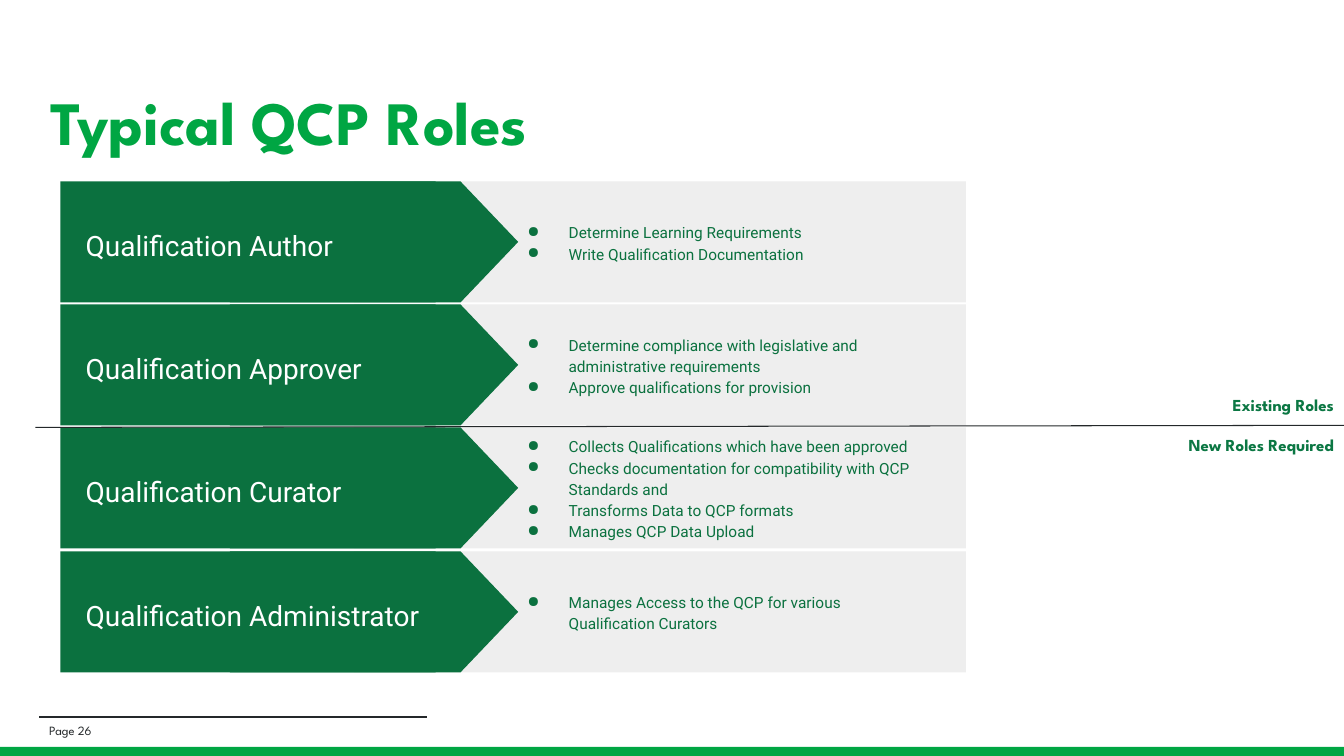
from dataclasses import dataclass

from lxml import etree
from pptx import Presentation
from pptx.dml.color import RGBColor
from pptx.enum.shapes import MSO_CONNECTOR, MSO_SHAPE
from pptx.enum.text import MSO_ANCHOR, PP_ALIGN
from pptx.oxml.ns import qn
from pptx.util import Emu, Pt

RECT = MSO_SHAPE.RECTANGLE
ARROW = MSO_SHAPE.FLOWCHART_OFFPAGE_CONNECTOR
STRAIGHT = MSO_CONNECTOR.STRAIGHT
TOP, MIDDLE = MSO_ANCHOR.TOP, MSO_ANCHOR.MIDDLE
LEFT, RIGHT = PP_ALIGN.LEFT, PP_ALIGN.RIGHT

SCALE = 9144  # EMU in one px, 100 px to the inch
LIME, GREEN, LABEL = "00A643", "0B713F", "0B7743"
GREY, INK, WHITE = "EEEEEE", "24282A", "FFFFFF"
HEAD, BODY = "League Spartan", "Roboto"
FIRST, SPAN, HIGH = 180, 367, 120  # top of first row, three row steps, row height


@dataclass
class Style:
    font: str
    size: int
    color: str
    bold: bool = False
    space: float = 1.0
    align: PP_ALIGN = LEFT
    gap: int = 0
    bullet: bool = False


@dataclass
class Role:
    name: str
    tasks: list[str]
    width: int = 599


TITLE = Style(HEAD, 44, LIME, bold=True, space=0.9)
PAGE = Style(HEAD, 9, INK)
NAME = Style(BODY, 20, WHITE, space=1.15)
TASK = Style(BODY, 11, GREEN, space=1.15, bullet=True)
NOTE = Style(HEAD, 12, LABEL, bold=True, align=RIGHT, gap=14)

ROLES = [
    Role("Qualification Author", [
        "Determine Learning Requirements",
        "Write Qualification Documentation",
    ]),
    Role("Qualification Approver", [
        "Determine compliance with legislative and administrative requirements",
        "Approve qualifications for provision",
    ], width=434),
    Role("Qualification Curator", [
        "Collects Qualifications which have been approved",
        "Checks documentation for compatibility with QCP \nStandards and",
        "Transforms Data to QCP formats",
        "Manages QCP Data Upload",
    ]),
    Role("Qualification Administrator", [
        "Manages Access to the QCP for various \nQualification Curators",
    ]),
]


def px(n: int) -> Emu:
    return Emu(n * SCALE)


def rgb(code: str) -> RGBColor:
    return RGBColor.from_string(code)


def block(slide, kind, x: int, y: int, w: int, h: int, color: str, turn: int = 0) -> None:
    shape = slide.shapes.add_shape(kind, px(x), px(y), px(w), px(h))
    shape.shadow.inherit = False
    shape.fill.solid()
    shape.fill.fore_color.rgb = rgb(color)
    shape.line.fill.background()
    shape.rotation = turn


def rule(slide, x1: int, y1: int, x2: int, y2: int, width: float) -> None:
    line = slide.shapes.add_connector(STRAIGHT, px(x1), px(y1), px(x2), px(y2))
    line.line.color.rgb = rgb(INK)
    line.line.width = Pt(width)
    etree.SubElement(line._element.spPr, qn("a:effectLst"))


def dot(para, color: str) -> None:
    props = para._p.get_or_add_pPr()
    props.set("marL", str(px(67)))
    props.set("indent", str(px(-41)))
    tint = etree.SubElement(props, qn("a:buClr"))
    etree.SubElement(tint, qn("a:srgbClr"), val=color)
    etree.SubElement(props, qn("a:buChar"), char="●")


def text(slide, x: int, y: int, w: int, h: int, lines: list[str], style: Style,
         side: int = 10, edge: int = 5, anchor: MSO_ANCHOR = MIDDLE) -> None:
    frame = slide.shapes.add_textbox(px(x), px(y), px(w), px(h)).text_frame
    frame.word_wrap = True
    frame.vertical_anchor = anchor
    frame.margin_left = frame.margin_right = px(side)
    frame.margin_top = frame.margin_bottom = px(edge)
    for i, line in enumerate(lines):
        para = frame.add_paragraph() if i else frame.paragraphs[0]
        para.text = line
        para.alignment = style.align
        para.line_spacing = style.space
        if i and style.gap:
            para.space_before = Pt(style.gap)
        if style.bullet:
            dot(para, style.color)
        for run in para.runs:
            run.font.name = style.font
            run.font.size = Pt(style.size)
            run.font.bold = style.bold
            run.font.color.rgb = rgb(style.color)


def row(slide, role: Role, top: int) -> None:
    block(slide, RECT, 351, top, 607, HIGH, GREY)
    block(slide, RECT, 60, top, 372, HIGH, GREEN)
    # The arrow is laid on its side, so its frame is upright
    block(slide, ARROW, 311, top - 83, HIGH, 286, GREEN, turn=270)
    text(slide, 72, top + 14, 391, 93, [role.name], NAME, 13, 13)
    text(slide, 484, top, role.width, HIGH, role.tasks, TASK, 13, 13)


def main() -> None:
    deck = Presentation()
    deck.slide_width, deck.slide_height = px(1333), px(750)
    slide = deck.slides.add_slide(deck.slide_layouts[6])

    # Footer and title
    block(slide, RECT, 0, 741, 1333, 9, LIME)
    rule(slide, 39, 711, 424, 711, 1.5)
    text(slide, 40, 52, 1254, 145, ["Typical QCP Roles"], TITLE)
    text(slide, 39, 715, 406, 19, ["Page 26"], PAGE)

    # Role rows
    for i, role in enumerate(ROLES):
        row(slide, role, FIRST + i * SPAN // 3)

    # Divide between existing and new roles
    rule(slide, 35, 424, 1333, 422, 0.75)
    text(slide, 1035, 382, 298, 65, ["Existing Roles", "New Roles Required"],
         NOTE, 10, 10, TOP)

    deck.save("out.pptx")


if __name__ == "__main__":
    main()
